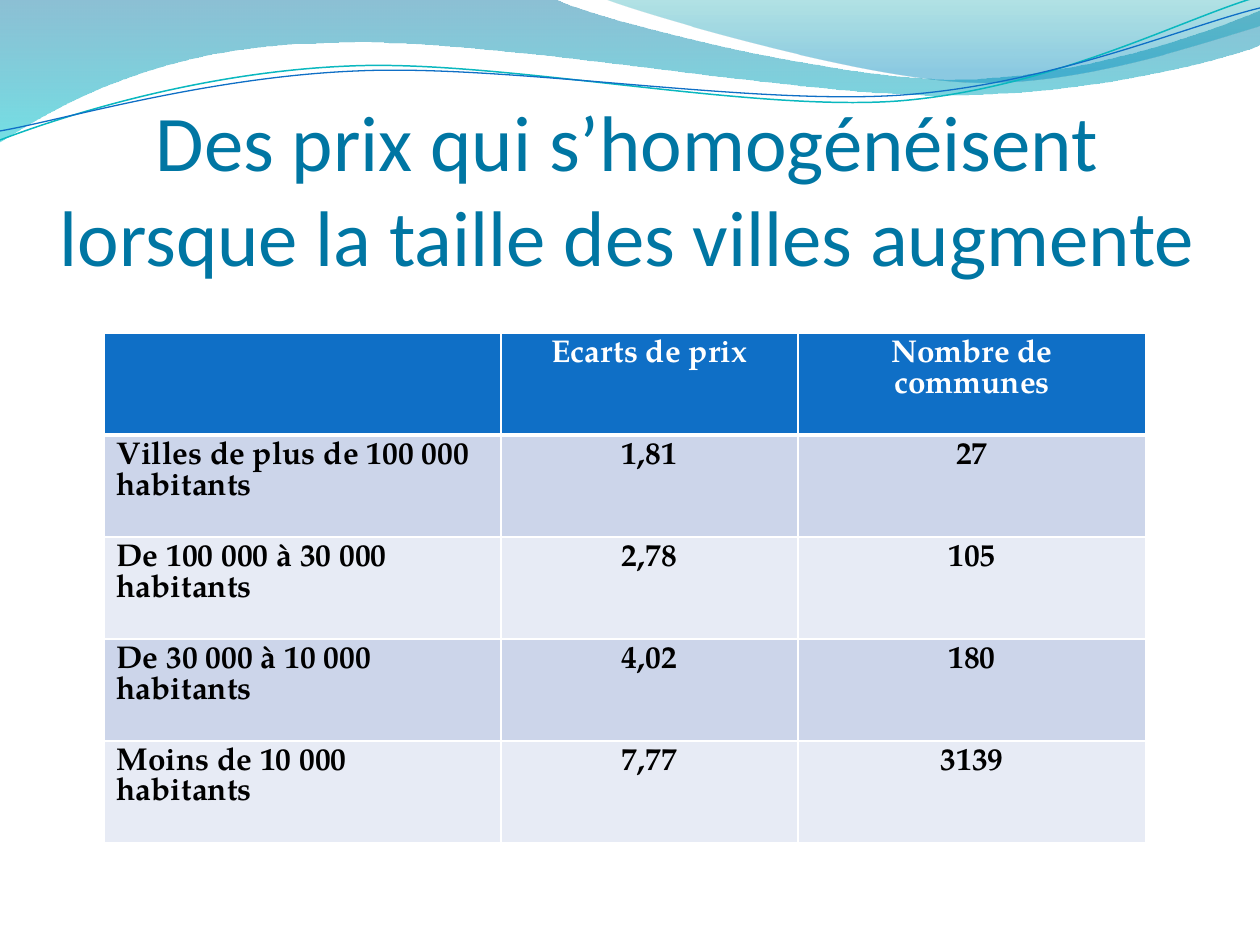
from lxml.etree import SubElement
from pptx import Presentation
from pptx.dml.color import RGBColor
from pptx.enum.text import MSO_ANCHOR, PP_ALIGN
from pptx.oxml.ns import qn
from pptx.util import Emu, Pt

EMU_PER_PX = 914400 / 126
TITLE_ONLY = 5
TITLE_FONT, TABLE_FONT = "Calibri", "TeX Gyre Pagella"

COLORS = {
    "title": "0076A3",
    "band_top": "0074A1",
    "band_bottom": "00C6CF",
    "crest_top": "00A1A9",
    "crest_bottom": "008BBF",
    "teal_line": "0AB8BF",
    "blue": "0F6FC6",
    "odd_row": "CCD5EA",
    "even_row": "E7EBF5",
    "white": "FFFFFF",
    "black": "000000",
}

# A pair is a straight step; six numbers are two control points and an end.
BAND = [
    (0, 0), (554, -1),
    (600, 21, 837, 79, 955, 79), (1075, 79, 1207, 33, 1260, 11),
    (1261, 45),
    (1239, 55, 1096, 96, 940, 95), (784, 95, 481, 35, 324, 43),
    (163, 45, 58, 105, -1, 142),
]
CREST = [
    (604, -1),
    (641, 14, 859, 78, 969, 82), (1079, 87, 1211, 40, 1260, 26),
    (1260, 0),
]
TEAL_WAVE = [
    (0, 140),
    (60, 117, 199, 72, 349, 66), (498, 59, 747, 112, 898, 101),
    (1050, 89, 1182, 19, 1257, -3),
]
BLUE_WAVE = [
    (0, 131),
    (59, 121, 207, 77, 357, 71), (508, 64, 752, 106, 903, 95),
    (1053, 84, 1186, 26, 1260, 8),
]

TABLE_ROWS = [
    ("", "Ecarts de prix", "Nombre de communes"),
    ("Villes de plus de 100 000 habitants", "1,81", "27"),
    ("De 100 000 à 30 000 habitants", "2,78", "105"),
    ("De 30 000 à 10 000 habitants", "4,02", "180"),
    ("Moins de 10 000 habitants", "7,77", "3139"),
]
COLUMN_WIDTHS = [397, 297, 348]
ROW_HEIGHT = 102


def px(value):
    return Emu(round(value * EMU_PER_PX))


def rgb(name):
    return RGBColor.from_string(COLORS[name])


def add_outline(slide, outline, close):
    """Build a freeform through all points, then group control points into curves."""
    points = [
        (px(x), px(y)) for step in outline for x, y in zip(step[::2], step[1::2])
    ]
    builder = slide.shapes.build_freeform(*points[0])
    builder.add_line_segments(points[1:], close=close)
    shape = builder.convert_to_shape()
    shape.shadow.inherit = False
    lines = iter(shape._element.spPr.findall(".//" + qn("a:lnTo")))
    for step in outline[1:]:
        line = next(lines)
        if len(step) == 6:
            line.addprevious(curve := line.makeelement(qn("a:cubicBezTo")))
            for part in (line, next(lines), next(lines)):
                curve.append(part[0])
                part.getparent().remove(part)
    return shape


def add_gradient_wave(slide, outline, stops):
    """Draw a filled wave; each stop is (position, colour name, opacity %)."""
    shape = add_outline(slide, outline, close=True)
    shape.line.fill.background()
    shape.fill.gradient()
    shape.fill.gradient_angle = 270
    for stop, (position, color, _) in zip(shape.fill.gradient_stops, stops):
        stop.position = position
        stop.color.rgb = rgb(color)
    color_elements = shape._element.spPr.findall(".//" + qn("a:srgbClr"))
    for element, (_, _, opacity) in zip(color_elements, stops):
        SubElement(element, qn("a:alpha")).set("val", str(opacity * 1000))


def add_wave_line(slide, outline, color, width):
    shape = add_outline(slide, outline, close=False)
    shape.fill.background()
    shape.line.color.rgb = rgb(color)
    shape.line.width = Pt(width)


def add_run(paragraph, text, font_name, size, color, bold=False):
    run = paragraph.add_run()
    run.text = text
    run.font.name = font_name
    run.font.size = Pt(size)
    run.font.bold = bold
    run.font.color.rgb = rgb(color)


def format_title(slide, text):
    title = slide.shapes.title
    title.left, title.top, title.width, title.height = map(px, (55, 125, 1144, 157))
    frame = title.text_frame
    frame.word_wrap = True
    frame.vertical_anchor = MSO_ANCHOR.BOTTOM
    frame.margin_left = frame.margin_right = frame.margin_bottom = 0
    paragraph = frame.paragraphs[0]
    paragraph.alignment = PP_ALIGN.CENTER
    add_run(paragraph, text, TITLE_FONT, 45, "title")
    slide.shapes._spTree.append(title._element)  # in front of the waves


def set_borders(cell, bottom_width):
    """Draw white borders, 1 pt except for the bottom; they precede the fill."""
    properties = cell._tc.get_or_add_tcPr()
    for side, width in (("L", 1), ("R", 1), ("T", 1), ("B", bottom_width)):
        line = SubElement(properties, qn(f"a:ln{side}"), w=str(Pt(width)))
        fill = SubElement(line, qn("a:solidFill"))
        SubElement(fill, qn("a:srgbClr"), val=COLORS["white"])


def fill_cell(cell, text, fill, color, alignment):
    cell.fill.solid()
    cell.fill.fore_color.rgb = rgb(fill)
    paragraph = cell.text_frame.paragraphs[0]
    paragraph.alignment = alignment
    paragraph.line_spacing = Pt(17.7)
    if text:
        add_run(paragraph, text, TABLE_FONT, 18, color, bold=True)


def add_price_table(slide):
    frame = slide.shapes.add_table(
        len(TABLE_ROWS), len(COLUMN_WIDTHS), px(104), px(333),
        px(sum(COLUMN_WIDTHS)), px(ROW_HEIGHT * len(TABLE_ROWS)),
    )
    table = frame.table
    for column, width in zip(table.columns, COLUMN_WIDTHS):
        column.width = px(width)
    for row_index, texts in enumerate(TABLE_ROWS):
        table.rows[row_index].height = px(ROW_HEIGHT)
        if row_index == 0:
            fill, color = "blue", "white"
        else:
            fill, color = ("odd_row" if row_index % 2 else "even_row"), "black"
        for column_index, text in enumerate(texts):
            cell = table.cell(row_index, column_index)
            if row_index == 0:
                set_borders(cell, bottom_width=3)
            alignment = PP_ALIGN.CENTER if column_index else PP_ALIGN.LEFT
            fill_cell(cell, text, fill, color, alignment)


def main():
    presentation = Presentation()
    presentation.slide_width, presentation.slide_height = px(1260), px(945)
    slide = presentation.slides.add_slide(presentation.slide_layouts[TITLE_ONLY])
    add_gradient_wave(slide, BAND, [(0, "band_top", 45), (1, "band_bottom", 55)])
    add_gradient_wave(slide, CREST, [(0, "crest_top", 30), (0.8, "crest_bottom", 45)])
    add_wave_line(slide, TEAL_WAVE, "teal_line", 0.85)
    add_wave_line(slide, BLUE_WAVE, "blue", 0.75)
    format_title(slide, "Des prix qui s’homogénéisent lorsque la taille des villes augmente")
    add_price_table(slide)
    presentation.save("out.pptx")


if __name__ == "__main__":
    main()
